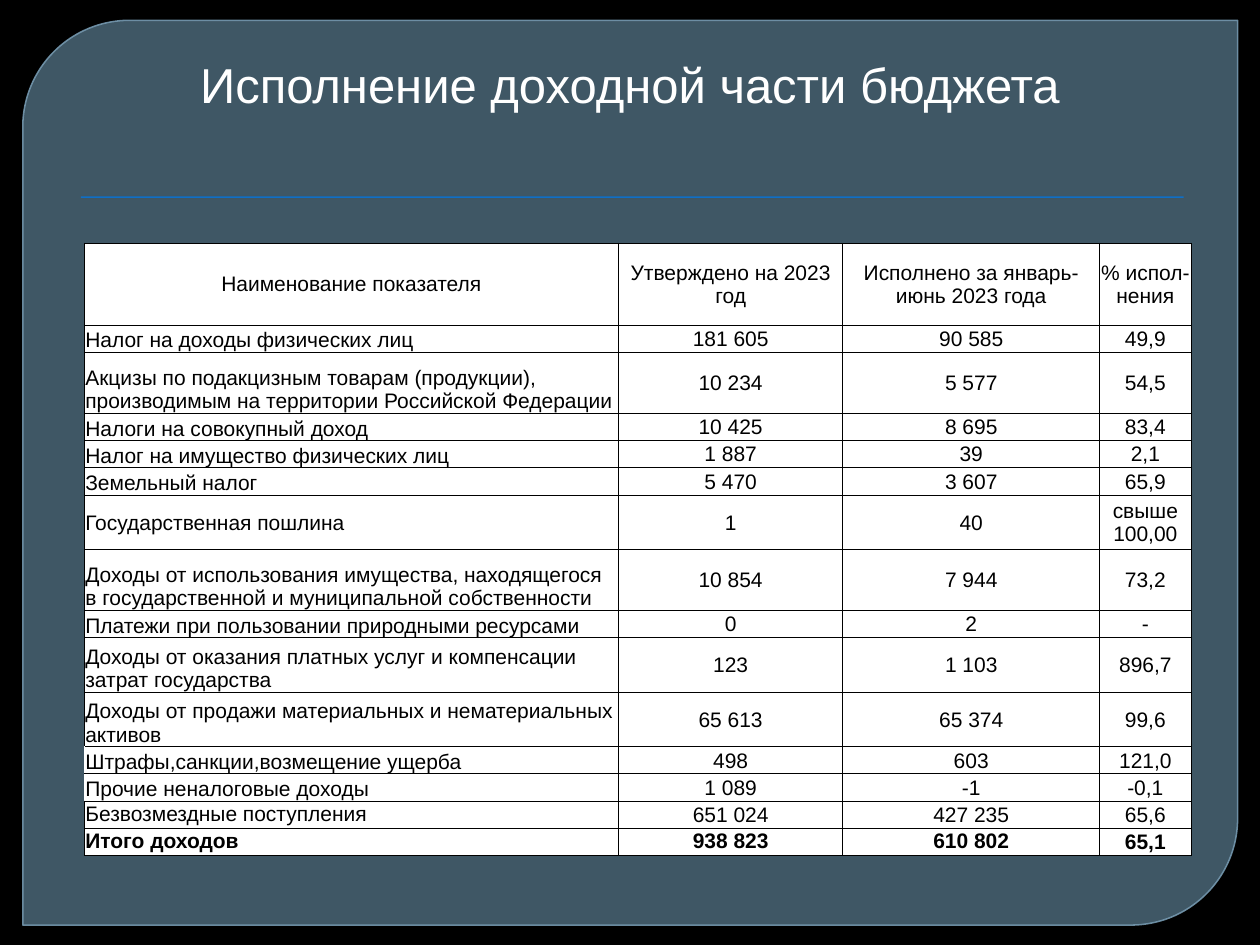
from lxml.etree import SubElement
from pptx import Presentation
from pptx.dml.color import RGBColor
from pptx.enum.shapes import MSO_SHAPE
from pptx.enum.text import MSO_ANCHOR, PP_ALIGN
from pptx.oxml.ns import qn
from pptx.util import Cm, Pt

FONT = "Arial"
HEADINGS = ["Наименование показателя", "Утверждено на 2023 год",
            "Исполнено за январь-июнь 2023 года", "% испол-нения"]
INCOME = [
    ("Налог на доходы физических лиц", "181 605", "90 585", "49,9"),
    ("Акцизы по подакцизным товарам (продукции), производимым на территории Российской Федерации",
     "10 234", "5 577", "54,5"),
    ("Налоги на совокупный доход", "10 425", "8 695", "83,4"),
    ("Налог на имущество физических лиц", "1 887", "39", "2,1"),
    ("Земельный налог", "5 470", "3 607", "65,9"),
    ("Государственная пошлина", "1", "40", "свыше 100,00"),
    ("Доходы от использования имущества, находящегося в государственной и муниципальной собственности",
     "10 854", "7 944", "73,2"),
    ("Платежи при пользовании природными ресурсами", "0", "2", "-"),
    ("Доходы от оказания платных услуг и компенсации затрат государства",
     "123", "1 103", "896,7"),
    ("Доходы от продажи материальных и нематериальных активов",
     "65 613", "65 374", "99,6"),
    ("Штрафы,санкции,возмещение ущерба", "498", "603", "121,0"),
    ("Прочие неналоговые доходы", "1 089", "-1", "-0,1"),
    ("Безвозмездные поступления", "651 024", "427 235", "65,6"),
    ("Итого доходов", "938 823", "610 802", "65,1"),
]
COLUMN_WIDTHS = [10.77, 4.52, 5.18, 1.84]
LINE_HEIGHT = 0.55
TALL_ROWS = {0: 1.65, 2: 1.23, 6: 1.1, 7: 1.22, 9: 1.1, 10: 1.1}
OPEN_LEFT_ROWS = (11, 12)
GRANTS_ROW, TOTAL_ROW = 13, 14


def color(value):
    return RGBColor.from_string(value)


def add_text(paragraph, text, size, ink, bold=False):
    run = paragraph.add_run()
    run.text = text
    run.font.name = FONT
    run.font.size = Pt(size)
    run.font.bold = bold
    run.font.color.rgb = color(ink)


def add_panel(slide, left, top, width, height):
    panel = slide.shapes.add_shape(MSO_SHAPE.ROUND_2_DIAG_RECTANGLE,
                                   Cm(left), Cm(top), Cm(width), Cm(height))
    panel.adjustments[0] = 0.118
    panel.adjustments[1] = 0
    panel.shadow.inherit = False
    panel.fill.solid()
    panel.fill.fore_color.rgb = color("61869C")
    panel.line.color.rgb = color("779BB2")
    panel.line.width = Pt(0.87)
    tints = list(panel._element.spPr.iter(qn("a:srgbClr")))
    for tint, opacity in zip(tints, (65, 88)):
        SubElement(tint, qn("a:alpha"), val=str(opacity * 1000))


def add_rule(slide, left, top, width, height):
    rule = slide.shapes.add_shape(MSO_SHAPE.RECTANGLE,
                                  Cm(left), Cm(top), Cm(width), Cm(height))
    rule.shadow.inherit = False
    rule.fill.solid()
    rule.fill.fore_color.rgb = color("0F6FC6")
    rule.line.fill.background()


def place_title(slide, left, top, width, height):
    title = slide.shapes.title
    title.left, title.top = Cm(left), Cm(top)
    title.width, title.height = Cm(width), Cm(height)
    title.text_frame.vertical_anchor = MSO_ANCHOR.BOTTOM
    heading = title.text_frame.paragraphs[0]
    heading.alignment = PP_ALIGN.CENTER
    heading._p.get_or_add_pPr().set("marL", str(Cm(0.15)))
    add_text(heading, "Исполнение доходной части бюджета", 28, "FFFFFF")
    slide.shapes._spTree.append(title._element)


def add_borders(cell, sides):
    for side in sides:
        border = SubElement(cell._tc.get_or_add_tcPr(), qn(f"a:ln{side}"), w=str(Pt(0.5)))
        ink = SubElement(border, qn("a:solidFill"))
        SubElement(ink, qn("a:srgbClr"), val="000000")


def cell_anchor(row, column):
    if row == TOTAL_ROW and column < 3 or row == GRANTS_ROW and column == 0:
        return MSO_ANCHOR.TOP
    if column == 0 and row not in (0, 6):
        return MSO_ANCHOR.BOTTOM
    return MSO_ANCHOR.MIDDLE


def cell_alignment(row, column):
    if row == 0 or column > 0:
        return PP_ALIGN.CENTER
    return PP_ALIGN.JUSTIFY if row >= GRANTS_ROW else PP_ALIGN.LEFT


def fill_cell(cell, row, column, text):
    add_borders(cell, "RTB" if column == 0 and row in OPEN_LEFT_ROWS else "LRTB")
    cell.fill.solid()
    cell.fill.fore_color.rgb = color("FFFFFF")
    cell.margin_left = cell.margin_right = cell.margin_top = Cm(0.02)
    cell.margin_bottom = 0
    cell.vertical_anchor = cell_anchor(row, column)
    paragraph = cell.text_frame.paragraphs[0]
    paragraph.alignment = cell_alignment(row, column)
    add_text(paragraph, text, 12, "000000", bold=row == TOTAL_ROW)


def add_income_table(slide, left, top):
    lines = [HEADINGS, *INCOME]
    heights = [TALL_ROWS.get(row, LINE_HEIGHT) for row in range(len(lines))]
    table = slide.shapes.add_table(len(lines), len(HEADINGS), Cm(left), Cm(top),
                                   Cm(sum(COLUMN_WIDTHS)), Cm(sum(heights))).table
    table.first_row = table.horz_banding = False
    for column, width in zip(table.columns, COLUMN_WIDTHS):
        column.width = Cm(width)
    for row, (line, height) in enumerate(zip(lines, heights)):
        table.rows[row].height = Cm(height)
        for column, text in enumerate(line):
            fill_cell(table.cell(row, column), row, column, text)


def main():
    deck = Presentation()
    deck.slide_width, deck.slide_height = Cm(25.4), Cm(19.05)
    slide = deck.slides.add_slide(deck.slide_layouts[5])
    slide.background.fill.solid()
    slide.background.fill.fore_color.rgb = color("000000")
    add_panel(slide, 0.46, 0.41, 24.49, 18.24)
    add_rule(slide, 1.63, 3.96, 22.23, 0.03)
    place_title(slide, 1.19, 0.58, 22.86, 1.83)
    add_income_table(slide, 1.7, 4.9)
    deck.save("out.pptx")


if __name__ == "__main__":
    main()
